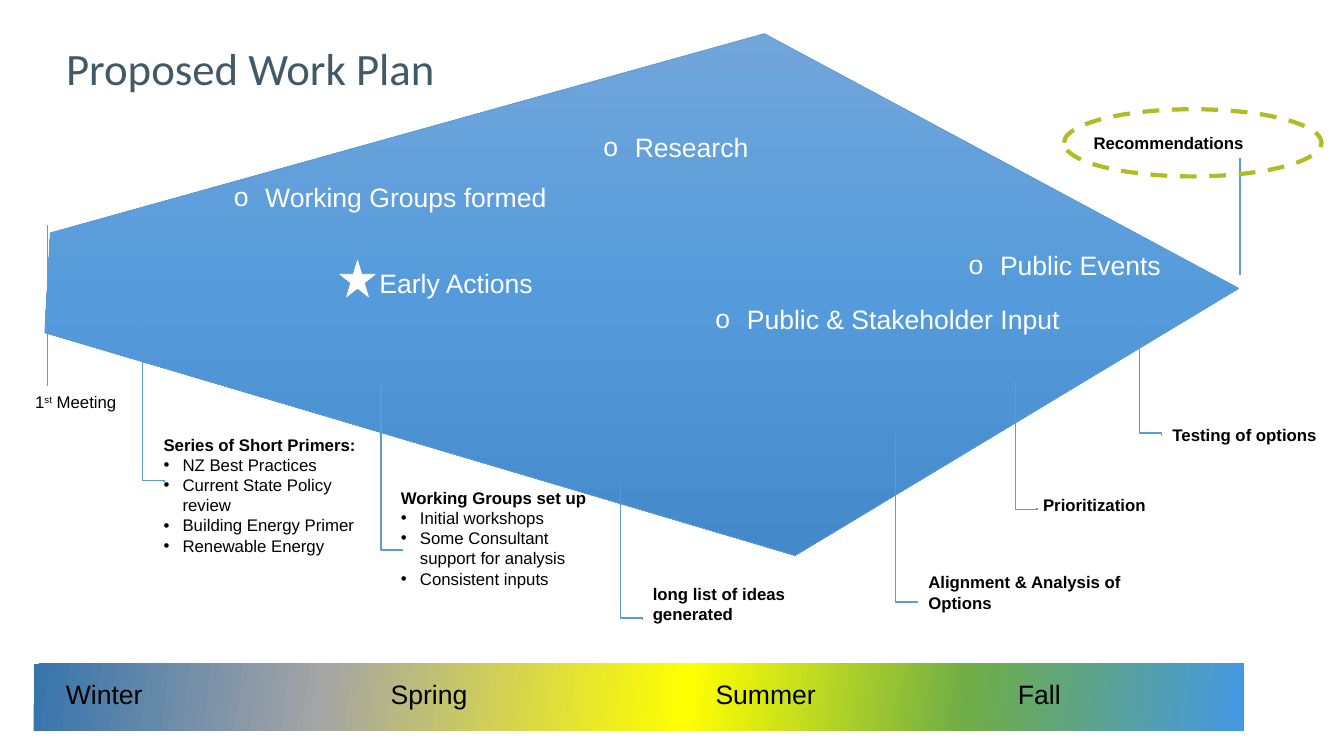
from dataclasses import dataclass

from lxml.etree import SubElement
from pptx import Presentation
from pptx.dml.color import RGBColor
from pptx.enum.dml import MSO_LINE
from pptx.enum.shapes import MSO_CONNECTOR as Connector, MSO_SHAPE as Preset
from pptx.enum.text import MSO_ANCHOR as Anchor, MSO_AUTO_SIZE as AutoSize, PP_ALIGN as Align
from pptx.oxml.ns import qn
from pptx.shapes.base import BaseShape
from pptx.slide import Slide
from pptx.util import Inches, Length, Pt

COLUMNS, ROWS = 120, 67.5
CELL = Inches(13.333) / COLUMNS


@dataclass(frozen=True)
class Theme:
    heading_font: str = "Calibri"
    body_font: str = "Arial"
    title: str = "415968"
    ink: str = "000000"
    light: str = "FFFFFF"
    line: str = "5B9BD5"
    accent: str = "AFBD22"
    diamond: tuple = ((0, "71A6DB"), (50, "559BDB"), (100, "448ACA"))
    seasons: tuple = ((0, "3674AD"), (24, "A5A5A5"), (54, "FFFF00"), (77, "70AD47"), (100, "4498E4"))
    title_size: int = 32
    label_size: int = 19
    note_size: int = 12


THEME = Theme()


@dataclass(frozen=True)
class Label:
    text: str
    column: float
    row: float
    width: float = 36
    bullet: str = ""
    color: str = THEME.light


@dataclass(frozen=True)
class Milestone:
    heading: str
    column: float
    row: float
    height: float
    foot_column: float
    foot_row: float
    rise: float
    bend: float
    width: float = 19
    items: tuple = ()
    placeholder: int = 0


LABELS = (
    Label("Working Groups formed", 20, 15.75, bullet="o"),
    Label("Public & Stakeholder Input", 63, 26.65, bullet="o"),
    Label("Public Events", 85.6, 21.8, 34, bullet="o"),
    Label("Research", 53, 11.25, bullet="o"),
    Label("Early Actions", 33, 23.4),
)
SEASONS = tuple(
    Label(name, column, 60.1, 16, color=THEME.ink)
    for name, column in (("Winter", 5), ("Spring", 34), ("Summer", 63), ("Fall", 90))
)
MILESTONES = (
    Milestone("Series of Short Primers:", 13.7, 38.35, 11.8, 14.65, 42.95, 15.05, 0.002, placeholder=1,
              items=("NZ Best Practices", "Current State Policy review",
                     "Building Energy Primer", "Renewable Energy")),
    Milestone("Working Groups set up", 34.9, 43.1, 10.25, 35.95, 49.15, 15.05, 0.002, placeholder=2,
              items=("Initial workshops", "Some Consultant support for analysis",
                     "Consistent inputs")),
    Milestone("long list of ideas generated", 57.4, 51.65, 4.5, 57.35, 55.4, 12.05, 0.019),
    Milestone("Alignment & Analysis of Options", 82, 50.65, 4.5, 81.9, 53.8, 15.05, 0.002),
    Milestone("Prioritization", 92.25, 43.75, 2.75, 92.6, 45.35, 11.35, -0.011),
    Milestone("Testing of options", 103.8, 37.5, 2.75, 103.7, 38.9, 12.05, 0.02, width=16),
)
DIAMOND = ((4.5, 20.8), (68.25, 3), (110.6, 25.75), (71, 49.6), (4, 29.7))


def grid(*cells: float) -> tuple[Length, ...]:
    return tuple(Length(round(cell * CELL)) for cell in cells)


def rgb(color: str) -> RGBColor:
    return RGBColor.from_string(color)


def write(shape: BaseShape, text: str, *, size: int = THEME.note_size, color: str = THEME.ink,
          font: str = THEME.body_font, bold: bool = False, bullet: str = "",
          hanging: float = 0, spacing: float = 1.0) -> None:
    frame = shape.text_frame
    paragraph = frame.add_paragraph() if frame.text else frame.paragraphs[0]
    paragraph.alignment = Align.LEFT
    paragraph.line_spacing = spacing
    paragraph.space_before = Pt(0)
    properties = paragraph._p.get_or_add_pPr()
    indent, = grid(hanging)
    properties.set("marL", str(indent))
    properties.set("indent", str(-indent))
    if bullet:
        SubElement(properties, qn("a:buFont")).set("typeface", font)
        SubElement(properties, qn("a:buChar")).set("char", bullet)
    else:
        SubElement(properties, qn("a:buNone"))
    for index, part in enumerate(text.split("^")):
        run = paragraph.add_run()
        run.text = part
        run.font.size, run.font.bold, run.font.name = Pt(size), bold, font
        run.font.color.rgb = rgb(color)
        if index % 2:
            run._r.get_or_add_rPr().set("baseline", "30000")


def place(shape: BaseShape, *cells: float) -> None:
    shape.left, shape.top, shape.width, shape.height = grid(*cells)


def add_box(slide: Slide, *cells: float) -> BaseShape:
    box = slide.shapes.add_textbox(*grid(*cells))
    box.text_frame.word_wrap = True
    return box


def fill_gradient(shape: BaseShape, stops: tuple, angle: int) -> None:
    shape.fill.gradient()
    shape.fill.gradient_angle = 360 - angle
    stop_list = shape._element.spPr.find(qn("a:gradFill")).find(qn("a:gsLst"))
    for old_stop in list(stop_list):
        stop_list.remove(old_stop)
    for position, color in stops:
        stop = SubElement(stop_list, qn("a:gs"))
        stop.set("pos", str(position * 1000))
        SubElement(stop, qn("a:srgbClr")).set("val", color)


def add_line(slide: Slide, kind: Connector, *cells: float) -> BaseShape:
    line = slide.shapes.add_connector(kind, *grid(*cells))
    line.line.color.rgb = rgb(THEME.line)
    line.line.width = Pt(1)
    SubElement(line._element.spPr, qn("a:effectLst"))
    return line


def add_elbow(slide: Slide, milestone: Milestone, run: float = 1.95) -> None:
    middle_column = milestone.foot_column - run / 2
    middle_row = milestone.foot_row - milestone.rise / 2
    elbow = add_line(slide, Connector.ELBOW,
                     middle_column - milestone.rise / 2, middle_row + run / 2,
                     middle_column + milestone.rise / 2, middle_row - run / 2)
    properties = elbow._element.spPr
    properties.find(qn("a:xfrm")).set("rot", str(270 * 60000))
    guide = SubElement(properties.find(qn("a:prstGeom")).find(qn("a:avLst")), qn("a:gd"))
    guide.set("name", "adj1")
    guide.set("fmla", f"val {round(milestone.bend * 100000)}")


def add_shape(slide: Slide, preset: Preset, *cells: float) -> BaseShape:
    shape = slide.shapes.add_shape(preset, *grid(*cells))
    shape.shadow.inherit = False
    return shape


def add_diamond(slide: Slide) -> None:
    start, *corners = (grid(*corner) for corner in DIAMOND)
    builder = slide.shapes.build_freeform(*start)
    builder.add_line_segments(corners, close=True)
    diamond = builder.convert_to_shape()
    diamond.shadow.inherit = False
    fill_gradient(diamond, THEME.diamond, 90)
    diamond.line.color.rgb = rgb(THEME.line)
    diamond.line.width = Pt(0.5)
    slide.shapes._spTree.insert(2, diamond._element)


def add_label(slide: Slide, label: Label) -> None:
    box = add_box(slide, label.column, label.row, label.width, 3.75)
    write(box, label.text, size=THEME.label_size, color=label.color,
          bullet=label.bullet, hanging=2.8 if label.bullet else 0)


def add_milestone(slide: Slide, milestone: Milestone) -> None:
    cells = milestone.column, milestone.row, milestone.width, milestone.height
    if milestone.placeholder:
        box = slide.placeholders[milestone.placeholder]
        place(box, *cells)
        box.text_frame.auto_size = AutoSize.NONE
    else:
        box = add_box(slide, *cells)
    write(box, milestone.heading, bold=True)
    for item in milestone.items:
        write(box, item, bullet="•", hanging=1.7)
    add_elbow(slide, milestone)


def main() -> None:
    presentation = Presentation()
    presentation.slide_width, presentation.slide_height = grid(COLUMNS, ROWS)
    slide = presentation.slides.add_slide(presentation.slide_layouts[3])
    add_diamond(slide)

    title = slide.shapes.title
    place(title, 5, 0.75, 108, 11.25)
    title.text_frame.vertical_anchor = Anchor.MIDDLE
    title.text_frame.auto_size = AutoSize.NONE
    write(title, "Proposed Work Plan", size=THEME.title_size, color=THEME.title,
          font=THEME.heading_font, spacing=0.9)

    add_line(slide, Connector.STRAIGHT, 4.25, 20.1, 4.25, 34.5)
    write(add_box(slide, 2.25, 34.5, 14, 2.75), "1^st^ Meeting")
    add_line(slide, Connector.STRAIGHT, 110.7, 14.1, 110.7, 24.6)
    write(add_box(slide, 96.75, 11.4, 23, 2.75), "Recommendations", bold=True)

    season_bar = add_shape(slide, Preset.RECTANGLE, 3, 59.25, 108, 6)
    fill_gradient(season_bar, THEME.seasons, 7)
    season_bar.line.fill.background()
    star = add_shape(slide, Preset.STAR_5_POINT, 30.35, 23.25, 3.15, 3.25)
    star.fill.solid()
    star.fill.fore_color.rgb = star.line.color.rgb = rgb(THEME.light)
    star.line.width = Pt(0.5)

    for label in LABELS + SEASONS:
        add_label(slide, label)
    for milestone in MILESTONES:
        add_milestone(slide, milestone)

    highlight = add_shape(slide, Preset.OVAL, 95, 9.75, 23, 6)
    highlight.fill.background()
    highlight.line.color.rgb = rgb(THEME.accent)
    highlight.line.width = Pt(3)
    highlight.line.dash_style = MSO_LINE.DASH
    presentation.save("out.pptx")


if __name__ == "__main__":
    main()
